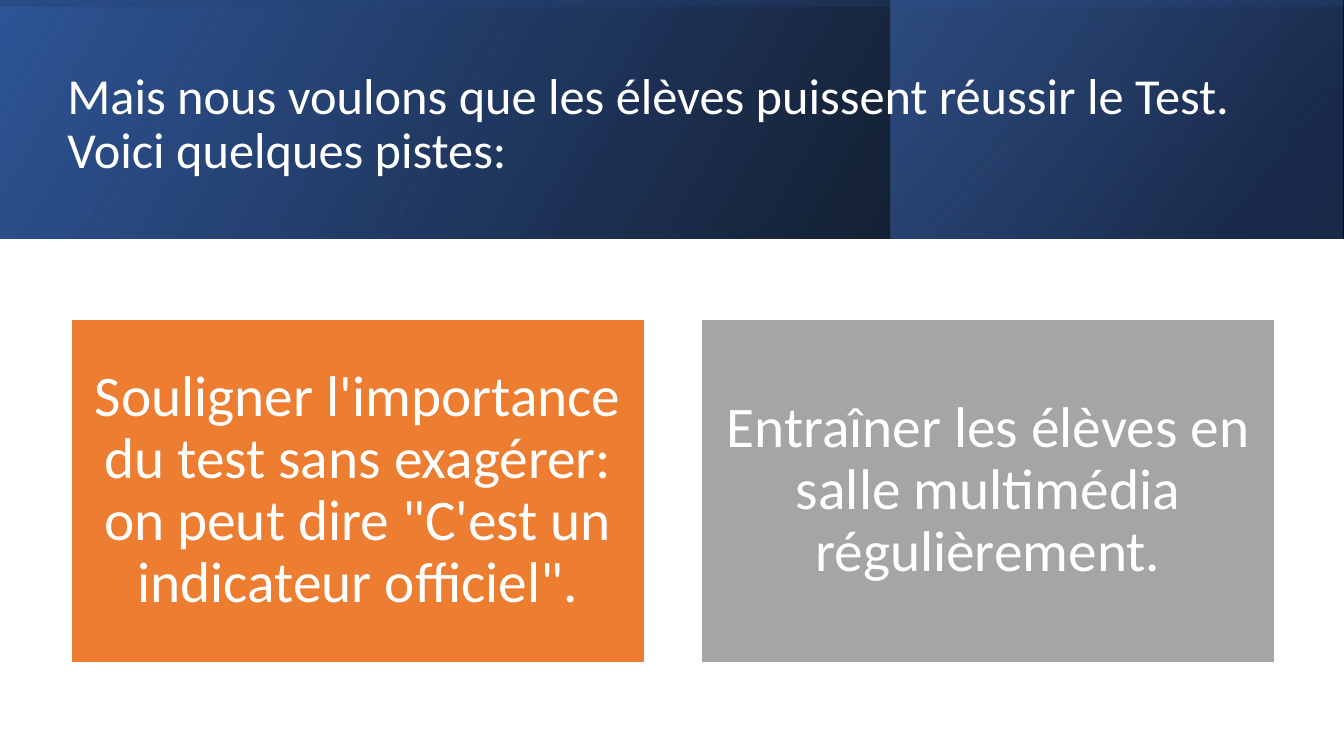
"""Build a slide with a gradient title band and two coloured advice boxes."""
from pptx import Presentation
from pptx.dml.color import RGBColor
from pptx.enum.shapes import MSO_SHAPE
from pptx.enum.text import MSO_ANCHOR as Anchor, PP_ALIGN as Align
from pptx.oxml import parse_xml
from pptx.oxml.ns import nsdecls, qn
from pptx.util import Cm, Pt

WHITE = RGBColor(0xFF, 0xFF, 0xFF)
BLACK = RGBColor(0x00, 0x00, 0x00)
ORANGE = RGBColor(0xED, 0x7D, 0x31)
GREY = RGBColor(0xA5, 0xA5, 0xA5)
BLUE = RGBColor(0x44, 0x72, 0xC4)
DEEP_BLUE = RGBColor(0x2F, 0x55, 0x97)
NAVY = RGBColor(0x20, 0x38, 0x64)

SLIDE_W, SLIDE_H, BAND_H = 33.87, 19.05, 6.02


def add_rectangle(left, top, width, height):
    rectangle = slide.shapes.add_shape(
        MSO_SHAPE.RECTANGLE, Cm(left), Cm(top), Cm(width), Cm(height))
    rectangle.shadow.inherit = False
    return rectangle


def write_text(frame, text, size, align):
    frame.word_wrap = True
    frame.vertical_anchor = Anchor.MIDDLE
    paragraph = frame.paragraphs[0]
    paragraph.text = text
    paragraph.alignment = align
    paragraph.line_spacing = 0.9
    paragraph.font.name = "Calibri"
    paragraph.font.size = Pt(size)
    paragraph.font.color.rgb = WHITE


prs = Presentation()
prs.slide_width, prs.slide_height = Cm(SLIDE_W), Cm(SLIDE_H)
slide = prs.slides.add_slide(prs.slide_layouts[6])

band_layers = [
    ((0, 0, SLIDE_W, BAND_H), 0, 330,
     [(0, BLACK, 96), (100, DEEP_BLUE, 100)]),
    ((22.45, 0, 11.38, BAND_H), 0, 320,
     [(19, NAVY, 68), (100, BLUE, 48)]),
    (((SLIDE_W - BAND_H) / 2, (BAND_H - SLIDE_W) / 2, BAND_H, SLIDE_W), 270, 350,
     [(23, DEEP_BLUE, 16), (99, BLACK, 45)]),
]
for box, rotation, angle, stops in band_layers:
    layer = add_rectangle(*box)
    layer.rotation = rotation
    layer.line.fill.background()
    layer.fill.background()
    properties = layer.element.spPr
    properties.find(qn("a:xfrm")).set("flipH", "1")
    stop_xml = "".join(
        f'<a:gs pos="{position * 1000}"><a:srgbClr val="{color}">'
        f'<a:alpha val="{opacity * 1000}"/></a:srgbClr></a:gs>'
        for position, color, opacity in stops)
    gradient = parse_xml(
        f'<a:gradFill {nsdecls("a")} rotWithShape="1"><a:gsLst>{stop_xml}</a:gsLst>'
        f'<a:lin ang="{angle * 60000}" scaled="0"/></a:gradFill>')
    properties.replace(properties.find(qn("a:noFill")), gradient)

title = slide.shapes.add_textbox(Cm(1.45), Cm(0.97), Cm(30.68), Cm(4.37))
write_text(
    title.text_frame,
    "Mais nous voulons que les élèves puissent réussir le Test. \vVoici quelques pistes:",
    36, Align.LEFT)

tips = [
    ("Souligner l'importance du test sans exagérer: on peut dire "
     "\"C'est un indicateur officiel\".", ORANGE),
    ("Entraîner les élèves en salle multimédia régulièrement.", GREY),
]
for column, (advice, color) in enumerate(tips):
    tip = add_rectangle(1.8 + column * 15.88, 8.05, 14.45, 8.66)
    tip.fill.solid()
    tip.fill.fore_color.rgb = color
    tip.line.color.rgb = WHITE
    tip.line.width = Pt(1)
    frame = tip.text_frame
    frame.margin_left = frame.margin_right = Cm(0.43)
    frame.margin_top = frame.margin_bottom = Cm(0.43)
    write_text(frame, advice, 41, Align.CENTER)

prs.save("out.pptx")
